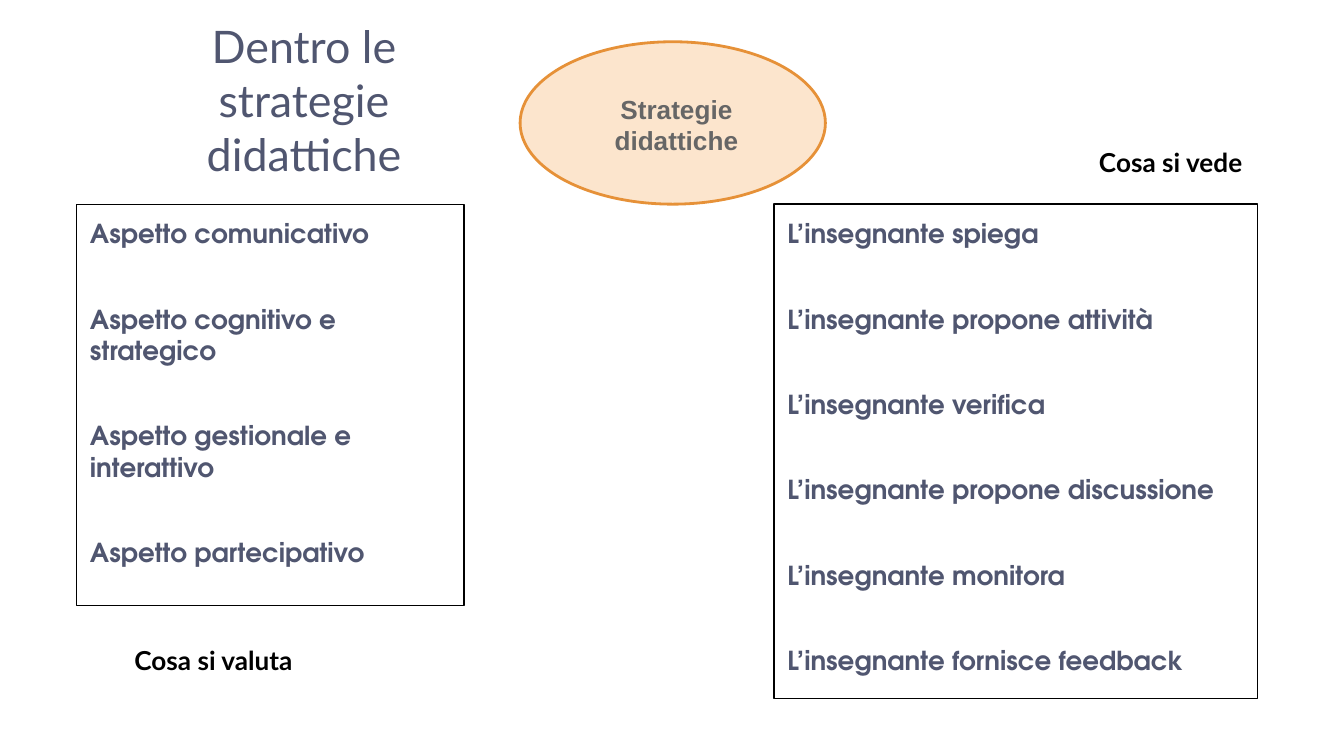
"""Build a slide on teaching strategies: what is assessed and what is seen."""
import pptx
import pptx.dml.color
import pptx.enum.shapes
import pptx.enum.text
import pptx.oxml.ns
import pptx.util

Cm, Pt = pptx.util.Cm, pptx.util.Pt
ALIGN = pptx.enum.text.PP_ALIGN
ANCHOR = pptx.enum.text.MSO_ANCHOR
SHAPE = pptx.enum.shapes.MSO_SHAPE
SLATE = "505670"


def rgb(value):
    """Turn a hex string into a colour."""
    return pptx.dml.color.RGBColor.from_string(value)


def write(sp, box, lines, font, size, color, bold=True,
          align=ALIGN.LEFT, anchor=ANCHOR.TOP, gap=0):
    """Place a shape and fill it with formatted paragraphs."""
    sp.left, sp.top, sp.width, sp.height = [Cm(v) for v in box]
    tf = sp.text_frame
    tf.text = "\n".join(lines)
    tf.word_wrap = True
    tf.auto_size = pptx.enum.text.MSO_AUTO_SIZE.NONE
    tf.vertical_anchor = anchor
    tf.margin_left = tf.margin_right = tf.margin_top = tf.margin_bottom = Cm(0.25)
    for i, p in enumerate(tf.paragraphs):
        pPr = p._p.get_or_add_pPr()
        pPr.set("marL", "0")
        pPr.set("indent", "0")
        pPr.append(pptx.oxml.parse_xml(f"<a:buNone {pptx.oxml.ns.nsdecls('a')}/>"))
        p.alignment = align
        p.space_before = Pt(gap if i else 0)
        for r in p.runs:
            r.font.name = font
            r.font.size = Pt(size)
            r.font.bold = bold
            r.font.color.rgb = rgb(color)


prs = pptx.Presentation()
prs.slide_width, prs.slide_height = Cm(25.4), Cm(14.29)
s = prs.slides.add_slide(prs.slide_layouts[1])
title, aspects = s.placeholders

write(title, (2.24, 1.55, 7.01, 2.11), ["Dentro le strategie didattiche"],
      "Lato", 24, SLATE, False, ALIGN.CENTER, ANCHOR.BOTTOM)

write(aspects, (1.45, 3.86, 7.32, 7.59),
      ["Aspetto comunicativo", "Aspetto cognitivo e strategico",
       "Aspetto gestionale e interattivo", "Aspetto partecipativo"],
      "TeX Gyre Adventor", 14, SLATE, gap=29)

ellipse = s.shapes.add_shape(SHAPE.OVAL, Cm(9.83), Cm(0.79), Cm(5.77), Cm(3.07))
sp = s.shapes.add_textbox(0, 0, 0, 0)
write(sp, (10.74, 1.96, 4.09, 0.79), ["Strategie didattiche"],
      "Arial", 14, "666666", align=ALIGN.CENTER, anchor=ANCHOR.MIDDLE)

actions = s.shapes.add_shape(SHAPE.RECTANGLE, 0, 0, 0, 0)
verbs = ["spiega", "propone attività", "verifica", "propone discussione",
         "monitora", "fornisce feedback"]
write(actions, (14.63, 3.86, 9.14, 9.35), [f"L’insegnante {v}" for v in verbs],
      "TeX Gyre Adventor", 14, SLATE, gap=29)

for sp, fill, line, width in [(aspects, "FFFFFF", "000000", 0.75),
                              (ellipse, "FCE5CD", "E69138", 1.5),
                              (actions, "FFFFFF", "000000", 0.75)]:
    sp.fill.solid()
    sp.fill.fore_color.rgb = rgb(fill)
    sp.line.color.rgb = rgb(line)
    sp.line.width = Pt(width)
for sp in (ellipse, actions):
    sp.shadow.inherit = False

for text, box in [("Cosa si valuta", (2.29, 11.94, 5.56, 0.79)),
                  ("Cosa si vede", (20.52, 2.51, 3.25, 1.12))]:
    write(s.shapes.add_textbox(0, 0, 0, 0), box, [text], "Lato", 14, "000000")

prs.save("out.pptx")
